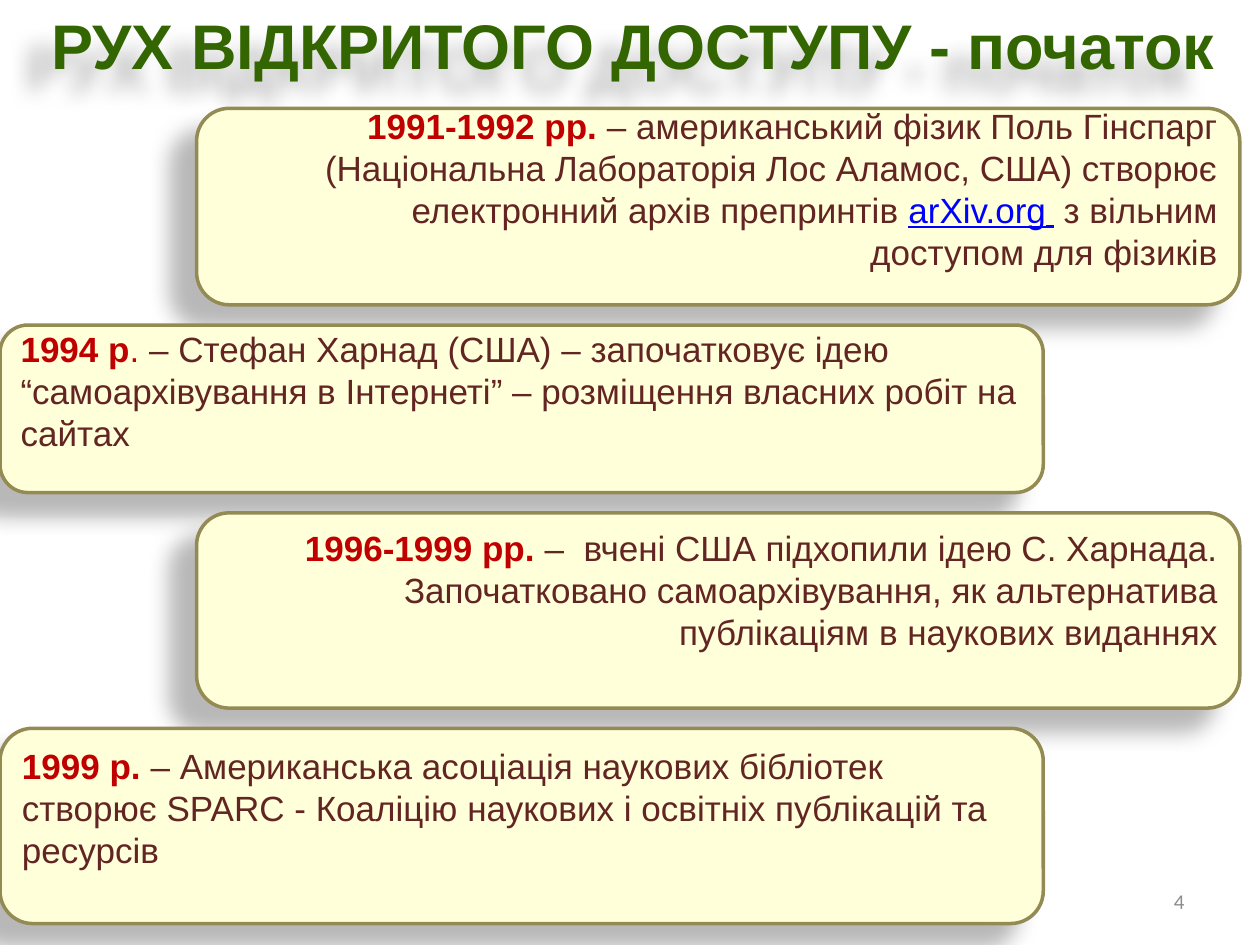
from dataclasses import dataclass

from lxml import etree
from pptx import Presentation
from pptx.dml.color import RGBColor
from pptx.enum.shapes import MSO_SHAPE
from pptx.enum.text import MSO_ANCHOR, PP_ALIGN
from pptx.oxml import parse_xml
from pptx.oxml.ns import nsdecls
from pptx.util import Inches, Pt

ROUNDED = MSO_SHAPE.ROUNDED_RECTANGLE
TOP, MIDDLE = MSO_ANCHOR.TOP, MSO_ANCHOR.MIDDLE
LEFT, RIGHT = PP_ALIGN.LEFT, PP_ALIGN.RIGHT

GREEN = RGBColor(0x33, 0x66, 0x00)
CREAM = RGBColor(0xFF, 0xFF, 0xD9)
OLIVE = RGBColor(0x94, 0x8A, 0x54)
RED = RGBColor(0xC0, 0x00, 0x00)
BROWN = RGBColor(0x63, 0x25, 0x23)
BLUE = RGBColor(0x00, 0x00, 0xFF)
GREY = RGBColor(0x8C, 0x8C, 0x8C)

SLIDE_W, SLIDE_H = 10, 7.5
CARD_W = 8.28
CARD_SHIFT = 1.56
FIRST_TOP, GAP = 0.86, 0.16


@dataclass
class Phrase:
    text: str
    color: RGBColor = BROWN
    bold: bool = False
    underline: bool = False
    font: str = "Arial"


@dataclass
class Card:
    height: float
    align: PP_ALIGN
    phrases: list[Phrase]
    indent: float = 0.1
    space_below: float = 0.34


CARDS = [
    Card(1.56, RIGHT, [
        Phrase("1991-1992 рр. ", RED, bold=True),
        Phrase("– американський фізик Поль Гінспарг (Національна Лабораторія "
               "Лос Аламос, США) створює електронний архів препринтів "),
        Phrase("arXiv.org", BLUE, underline=True),
        Phrase(" ", BLUE, underline=True, font="Calibri"),
        Phrase(" з вільним доступом для фізиків"),
    ], indent=0.6),
    Card(1.33, LEFT, [
        Phrase("1994 р", RED, bold=True),
        Phrase(". ", RED),
        Phrase("– Стефан Харнад (США) – започатковує ідею “самоархівування "
               "в Інтернеті” – розміщення власних робіт на сайтах"),
    ]),
    Card(1.55, RIGHT, [
        Phrase("1996-1999 рр. ", RED, bold=True),
        Phrase("–  вчені США підхопили ідею С. Харнада. Започатковано "
               "самоархівування, як альтернатива публікаціям в наукових виданнях"),
    ], space_below=0.38),
    Card(1.55, LEFT, [
        Phrase("1999 р. ", RED, bold=True),
        Phrase("– Американська асоціація наукових бібліотек створює SPARC - "
               "Коаліцію наукових і освітніх публікацій та ресурсів"),
    ]),
]


def add_shadow(s) -> None:
    """Give a shape a soft shadow that falls down and to the left."""
    sp_pr = s._element.spPr
    for old in sp_pr.findall("{*}effectLst"):
        sp_pr.remove(old)
    effects = parse_xml(f"<a:effectLst {nsdecls('a')}/>")
    shadow = etree.SubElement(
        effects, effects.tag.replace("effectLst", "outerShdw"),
        blurRad=str(Pt(11.8)), dist=str(Pt(19.7)), dir=str(141 * 60000),
        algn="ctr", rotWithShape="0")
    color = etree.SubElement(
        shadow, effects.tag.replace("effectLst", "srgbClr"), val="000000")
    etree.SubElement(
        color, effects.tag.replace("effectLst", "alpha"), val="28000")
    sp_pr.append(effects)


def write(s, phrases: list[Phrase], *, size: float, align: PP_ALIGN = LEFT,
          anchor: MSO_ANCHOR = TOP, indent: float = 0.1,
          space_below: float = 0.05) -> None:
    tf = s.text_frame
    tf.word_wrap = True
    tf.vertical_anchor = anchor
    tf.margin_left = Inches(indent)
    tf.margin_bottom = Inches(space_below)
    p = tf.paragraphs[0]
    p.alignment = align
    for phrase in phrases:
        r = p.add_run()
        r.text = phrase.text
        r.font.name = phrase.font
        r.font.size = Pt(size)
        r.font.bold = phrase.bold
        r.font.underline = phrase.underline
        r.font.color.rgb = phrase.color


def add_card(slide, card: Card, top: float) -> None:
    left = CARD_SHIFT if card.align == RIGHT else 0
    s = slide.shapes.add_shape(ROUNDED, Inches(left), Inches(top),
                               Inches(CARD_W), Inches(card.height))
    s.fill.solid()
    s.fill.fore_color.rgb = CREAM
    s.line.color.rgb = OLIVE
    s.line.width = Pt(2)
    add_shadow(s)
    write(s, card.phrases, size=20, align=card.align, anchor=MIDDLE,
          indent=card.indent, space_below=card.space_below)


def main() -> None:
    prs = Presentation()
    prs.slide_width, prs.slide_height = Inches(SLIDE_W), Inches(SLIDE_H)
    slide = prs.slides.add_slide(prs.slide_layouts[6])

    title = slide.shapes.add_textbox(Inches(0.31), 0, Inches(9.52), Inches(0.71))
    write(title, [Phrase("РУХ ВІДКРИТОГО ДОСТУПУ - початок", GREEN, bold=True)],
          size=36)
    add_shadow(title)

    top = FIRST_TOP
    for card in CARDS:
        add_card(slide, card, top)
        top += card.height + GAP

    number = slide.shapes.add_textbox(Inches(7.17), Inches(6.95),
                                      Inches(2.33), Inches(0.4))
    write(number, [Phrase("4", GREY, font="Calibri")], size=12, align=RIGHT,
          anchor=MIDDLE)
    prs.save("out.pptx")


if __name__ == "__main__":
    main()
